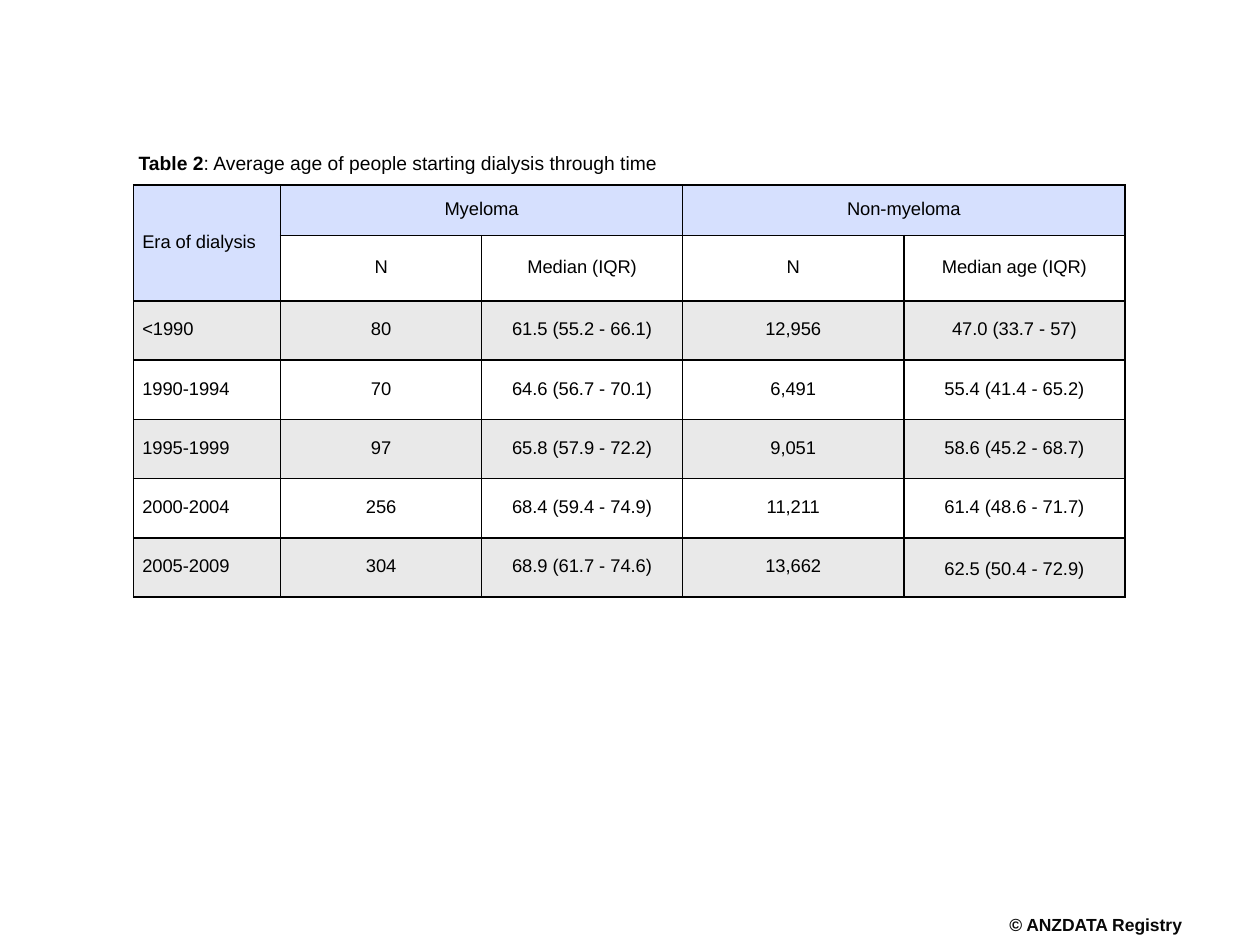
import pptx
import pptx.util
import pptx.dml.color
import pptx.enum.text
import pptx.oxml

Inches, Pt = pptx.util.Inches, pptx.util.Pt
ALIGN = pptx.enum.text.PP_ALIGN
ANCHOR = pptx.enum.text.MSO_ANCHOR
FIT = pptx.enum.text.MSO_AUTO_SIZE

COLORS = {"text": "000000", "line": "000000", "credit": "080808",
          "head": "D6E0FE", "band": "E9E9E9"}
WIDE, HIGH = Inches(10), Inches(7.5)
COLS = [1.17, 1.6, 1.6, 1.76, 1.76]
ROWS = [0.4, 0.52] + [0.47] * 5
MERGES = [((0, 0), (1, 0)), ((0, 1), (0, 2)), ((0, 3), (0, 4))]
DATA = [
    ["Era of dialysis", "Myeloma", "", "Non-myeloma", ""],
    ["", "N", "Median (IQR)", "N", "Median age (IQR)"],
    ["<1990", "80", "61.5 (55.2 - 66.1)", "12,956", "47.0 (33.7 - 57)"],
    ["1990-1994", "70", "64.6 (56.7 - 70.1)", "6,491", "55.4 (41.4 - 65.2)"],
    ["1995-1999", "97", "65.8 (57.9 - 72.2)", "9,051", "58.6 (45.2 - 68.7)"],
    ["2000-2004", "256", "68.4 (59.4 - 74.9)", "11,211", "61.4 (48.6 - 71.7)"],
    ["2005-2009", "304", "68.9 (61.7 - 74.6)", "13,662", "62.5 (50.4 - 72.9)"],
]


def color(name):
    return pptx.dml.color.RGBColor.from_string(COLORS[name])


def write(frame, text, lead="", size=10.5, tint="text", bold=False,
          align=ALIGN.LEFT, space=0.85):
    """Fill a text frame with one paragraph; lead is a bold opening."""
    para = frame.paragraphs[0]
    para.alignment, para.line_spacing = align, space
    for part, heavy in ((lead, True), (text, bold)):
        if part:
            run = para.add_run()
            run.text = part
            run.font.name, run.font.size = "Arial", Pt(size)
            run.font.bold, run.font.color.rgb = heavy, color(tint)


def inset(frame, gap):
    frame.margin_left = frame.margin_right = gap
    frame.margin_top = frame.margin_bottom = gap


def place(shape, box):
    shape.left, shape.top, shape.width, shape.height = box


def rule(cell):
    """Draw a one-point line on all four sides of a cell."""
    props = cell._tc.get_or_add_tcPr()
    for side in "LRTB":
        line = pptx.oxml.parse_xml(
            f'<a:ln{side} xmlns:a="http://schemas.openxmlformats.org/'
            f'drawingml/2006/main" w="{Pt(1)}"><a:solidFill>'
            f'<a:srgbClr val="{COLORS["line"]}"/></a:solidFill></a:ln{side}>')
        props.append(line)


def shade(cell, row, col):
    name = None
    if row == 0 or (row == 1 and col == 0):
        name = "head"
    elif row > 1 and row % 2 == 0:
        name = "band"
    if name:
        cell.fill.solid()
        cell.fill.fore_color.rgb = color(name)
    else:
        cell.fill.background()


def add_title(slide, box):
    title = slide.shapes.title
    place(title, box)
    frame = title.text_frame
    frame.word_wrap, frame.auto_size = True, FIT.NONE
    frame.vertical_anchor = ANCHOR.TOP
    inset(frame, Inches(0.04))
    write(frame, ": Average age of people starting dialysis through time",
          lead="Table 2", size=11, space=1.0)


def add_ages(slide, box):
    table = slide.shapes.add_table(len(ROWS), len(COLS), *box).table
    table.first_row = table.horz_banding = False
    for col, share in zip(table.columns, COLS):
        col.width = int(box[2] * share / sum(COLS))
    for row, share in zip(table.rows, ROWS):
        row.height = int(box[3] * share / sum(ROWS))
    for first, last in MERGES:
        table.cell(*first).merge(table.cell(*last))
    for i, line in enumerate(DATA):
        for j, text in enumerate(line):
            cell = table.cell(i, j)
            cell.margin_left = cell.margin_right = Inches(0.07)
            cell.margin_top = cell.margin_bottom = 0
            cell.vertical_anchor = ANCHOR.MIDDLE
            rule(cell)
            shade(cell, i, j)
            final = (i, j) == (len(ROWS) - 1, len(COLS) - 1)
            write(cell.text_frame, text, space=1.14 if final else 0.85,
                  align=ALIGN.CENTER if j else ALIGN.LEFT)


def add_credit(slide, box):
    frame = slide.shapes.add_textbox(*box).text_frame
    frame.word_wrap, frame.auto_size = False, FIT.SHAPE_TO_FIT_TEXT
    inset(frame, 0)
    write(frame, "© ANZDATA Registry", size=10, tint="credit", bold=True,
          align=ALIGN.CENTER)


def main():
    deck = pptx.Presentation()
    deck.slide_width, deck.slide_height = WIDE, HIGH
    slide = deck.slides.add_slide(deck.slide_layouts.get_by_name("Title Only"))
    left, top, width = Inches(1.06), Inches(1.47), Inches(7.87)
    label = Inches(0.31)
    add_title(slide, (left, top - label, width, label))
    add_ages(slide, (left, top, width, Inches(sum(ROWS))))
    add_credit(slide, (Inches(7.99), Inches(7.28), Inches(1.41), Inches(0.17)))
    deck.save("out.pptx")


if __name__ == "__main__":
    main()
